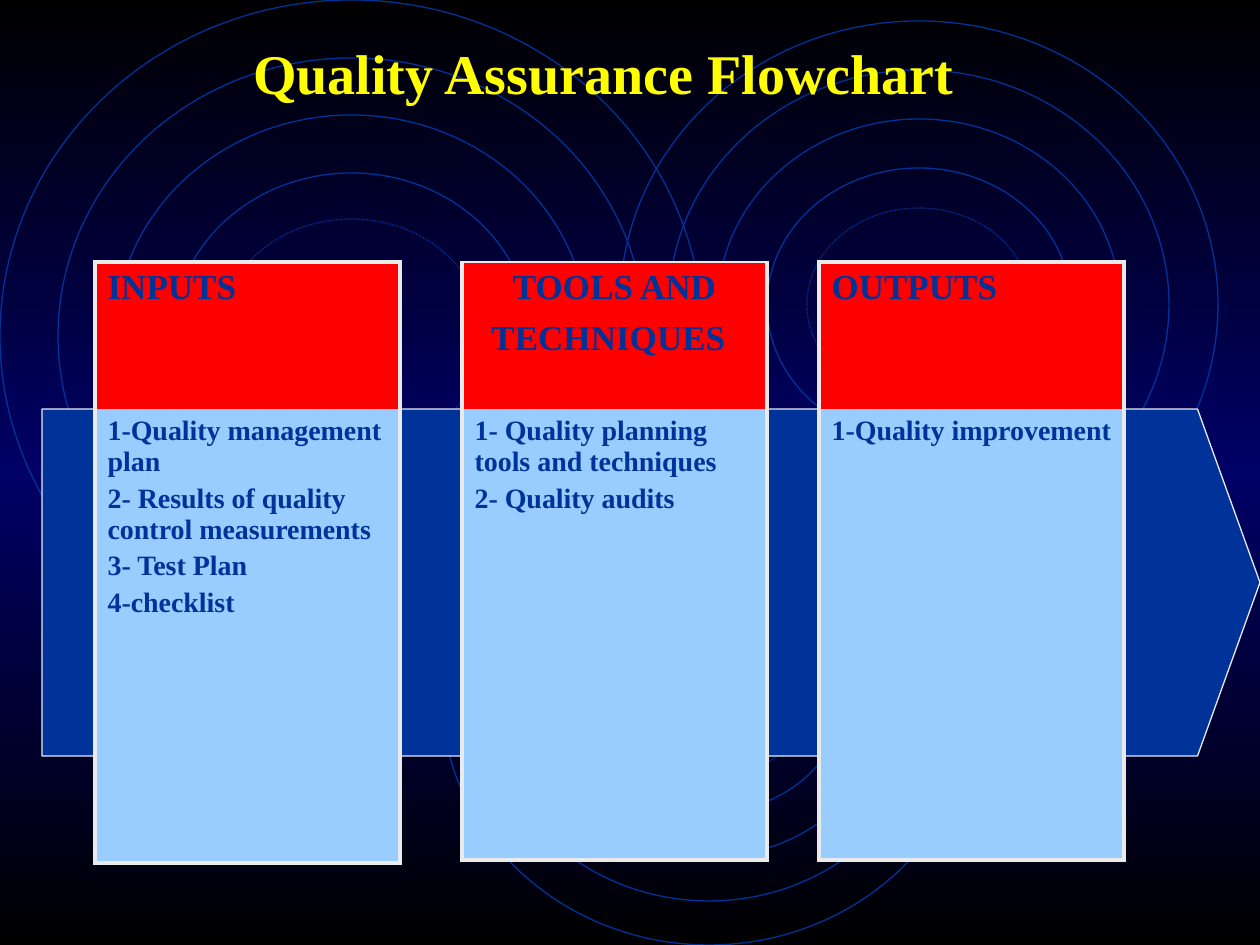
import copy

import pptx
import pptx.dml.color
import pptx.enum.dml
import pptx.enum.shapes
import pptx.enum.text
import pptx.oxml
import pptx.oxml.ns
import pptx.util

SCALE = 914400 / 126
FONT = "Times New Roman"
BLACK = pptx.dml.color.RGBColor(0x00, 0x00, 0x00)
NAVY = pptx.dml.color.RGBColor(0x00, 0x00, 0x66)
BLUE = pptx.dml.color.RGBColor(0x00, 0x33, 0x99)
SKY = pptx.dml.color.RGBColor(0x99, 0xCC, 0xFF)
RED = pptx.dml.color.RGBColor(0xFF, 0x00, 0x00)
YELLOW = pptx.dml.color.RGBColor(0xFF, 0xFF, 0x00)
SILVER = pptx.dml.color.RGBColor(0xEA, 0xEA, 0xEA)


def px(*lengths):
    return [pptx.util.Emu(round(length * SCALE)) for length in lengths]


def add_run(paragraph, text, size, color, bold=True):
    run = paragraph.add_run()
    run.text = text
    style = {"name": FONT, "size": pptx.util.Pt(size), "bold": bold}
    for attribute, value in style.items():
        setattr(run.font, attribute, value)
    run.font.color.rgb = color


presentation = pptx.Presentation()
presentation.slide_width, presentation.slide_height = px(1260, 945)
slide = presentation.slides.add_slide(presentation.slide_layouts[6])

background = slide.background.fill
background.gradient()
background.gradient_angle = 270
stop_list = slide.element.find(".//" + pptx.oxml.ns.qn("a:gsLst"))
stop_list.append(copy.deepcopy(stop_list[-1]))
stop_values = [(0, BLACK), (0.5, NAVY), (1, BLACK)]
for stop, (position, color) in zip(background.gradient_stops, stop_values):
    stop.position = position
    stop.color.rgb = color

RING_INSETS = [0, 0.082, 0.164, 0.246, 0.312]
ring_groups = [(0, 0, 703, 672), (441, 441, 536, 504), (620, 21, 598, 567)]
for left, top, width, height in ring_groups:
    for fraction in RING_INSETS:
        inset = round(width * fraction)
        ring = slide.shapes.add_shape(
            pptx.enum.shapes.MSO_SHAPE.OVAL,
            *px(left + inset, top + inset, width - 2 * inset, height - 2 * inset))
        ring.shadow.inherit = False
        ring.fill.background()
        ring.line.color.rgb = BLUE
        ring.line.width = pptx.util.Pt(0.75)
        if fraction == RING_INSETS[-1]:
            ring.line.dash_style = pptx.enum.dml.MSO_LINE.ROUND_DOT

arrow = slide.shapes.add_shape(
    pptx.enum.shapes.MSO_SHAPE.PENTAGON, *px(42, 409, 1218, 347))
arrow.adjustments[0] = 0.18
arrow.shadow.inherit = False
arrow.fill.solid()
arrow.fill.fore_color.rgb = BLUE
arrow.line.color.rgb = SILVER
arrow.line.width = pptx.util.Pt(0.75)

CENTER = pptx.enum.text.PP_ALIGN.CENTER
LEFT = pptx.enum.text.PP_ALIGN.LEFT
COLUMN_WIDTH, HEADER_HEIGHT = 305, 147
columns = [
    (95, 454, "INPUTS", LEFT, 2.25, [
        "1-Quality management plan",
        "2- Results of quality control measurements",
        "3- Test Plan",
        "4-checklist"]),
    (462, 451, "TOOLS AND TECHNIQUES", CENTER, 1, [
        "1- Quality planning tools and techniques",
        "2- Quality audits"]),
    (819, 451, "OUTPUTS", LEFT, 2.25, ["1-Quality improvement"]),
]
for left, body_height, heading, alignment, top_width, items in columns:
    table = slide.shapes.add_table(
        2, 1, *px(left, 262, COLUMN_WIDTH, HEADER_HEIGHT + body_height)).table
    table.first_row = False
    table.horz_banding = False
    table.rows[0].height, table.rows[1].height = px(HEADER_HEIGHT, body_height)
    header, body = table.cell(0, 0), table.cell(1, 0)

    cell_styles = [
        (header, RED, {"L": 2.25, "R": 2.25, "T": top_width, "B": 0}),
        (body, SKY, {"L": 2.25, "R": 2.25, "T": 0, "B": 2.25}),
    ]
    for cell, fill_color, borders in cell_styles:
        properties = cell._tc.get_or_add_tcPr()
        for side, width in borders.items():
            paint = (f'<a:solidFill><a:srgbClr val="{SILVER}"/></a:solidFill>'
                     if width else "<a:noFill/>")
            properties.append(pptx.oxml.parse_xml(
                f'<a:ln{side} {pptx.oxml.ns.nsdecls("a")} '
                f'w="{pptx.util.Pt(width)}">{paint}</a:ln{side}>'))
        cell.fill.solid()
        cell.fill.fore_color.rgb = fill_color

    paragraph = header.text_frame.paragraphs[0]
    paragraph.alignment = alignment
    add_run(paragraph, heading, 20, BLUE)
    if alignment == CENTER:
        add_run(paragraph, " ", 28, SILVER, bold=False)

    for index, item in enumerate(items):
        if index:
            paragraph = body.text_frame.add_paragraph()
            paragraph.space_before = pptx.util.Pt(3.2)
        else:
            paragraph = body.text_frame.paragraphs[0]
        add_run(paragraph, item, 16, BLUE)

title = slide.shapes.add_textbox(*px(63, 32, 1081, 79))
title.text_frame.word_wrap = True
paragraph = title.text_frame.paragraphs[0]
paragraph.alignment = CENTER
add_run(paragraph, "Quality Assurance Flowchart", 32, YELLOW)

presentation.save("out.pptx")
